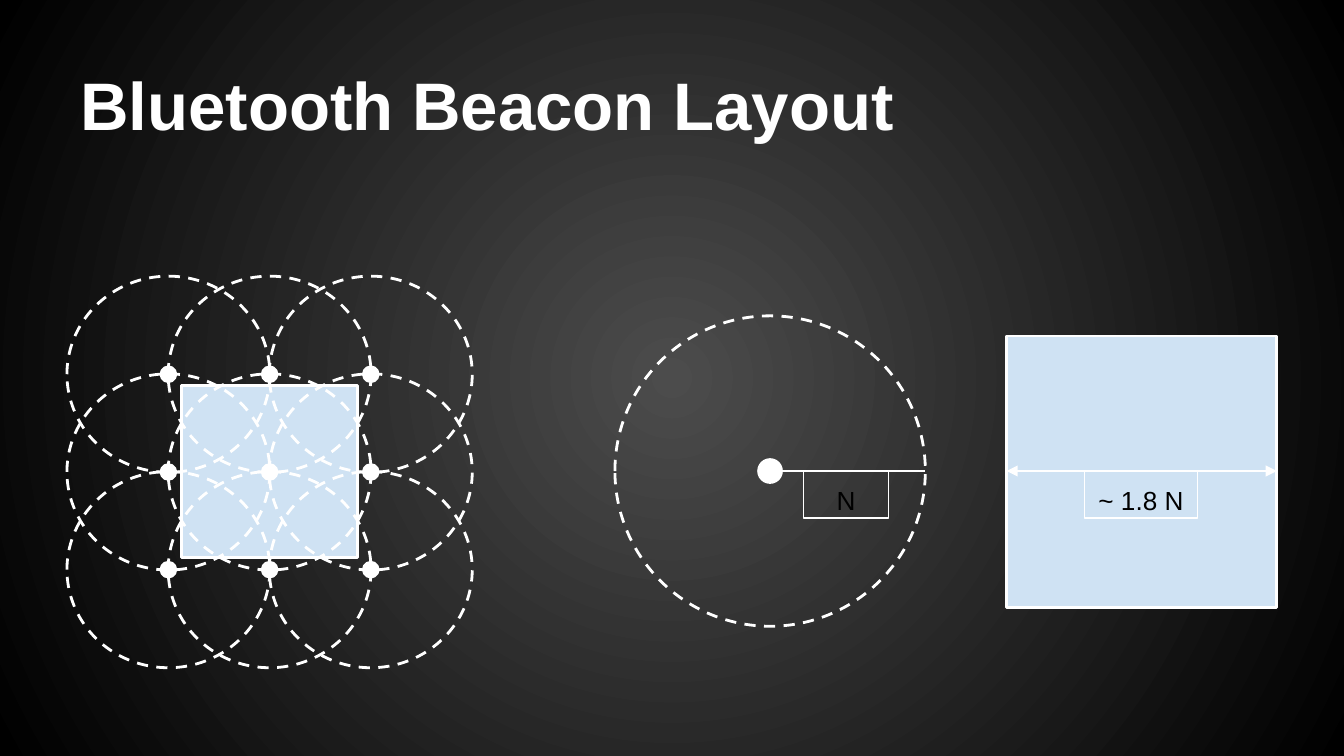
from itertools import product

from pptx import Presentation
from pptx.dml.color import RGBColor
from pptx.enum.dml import MSO_LINE as Dash
from pptx.enum.shapes import MSO_CONNECTOR as Connector, MSO_SHAPE as Shape
from pptx.enum.text import MSO_ANCHOR as Anchor, PP_ALIGN as Align
from pptx.oxml import parse_xml
from pptx.oxml.ns import nsdecls, qn
from pptx.util import Inches, Pt

COLUMNS, ROWS = 100, 56.25
WHITE, BLACK, PALE_BLUE = "FFFFFF", "000000", "CFE2F3"


def color(value):
    return RGBColor.from_string(value)


def write(frame, text, size=14, ink=BLACK, bold=False, align=Align.LEFT, anchor=Anchor.TOP):
    frame.word_wrap = True
    frame.vertical_anchor = anchor
    frame.margin_left = frame.margin_right = Inches(0.1)
    frame.margin_top = frame.margin_bottom = Inches(0.1)
    paragraph = frame.paragraphs[0]
    paragraph.alignment = align
    run = paragraph.add_run()
    run.text = text
    run.font.name = "Arial"
    run.font.size = Pt(size)
    run.font.bold = bold
    run.font.color.rgb = color(ink)


class Board:
    def __init__(self, deck):
        self.cell_width = deck.slide_width / COLUMNS
        self.cell_height = deck.slide_height / ROWS
        self.slide = deck.slides.add_slide(deck.slide_layouts[6])
        self.shapes = self.slide.shapes

    def place(self, *cells):
        sizes = (self.cell_width, self.cell_height) * 2
        return [round(cell * size) for cell, size in zip(cells, sizes)]

    def backdrop(self, center, edge):
        fill = self.slide.background.fill
        fill.gradient()
        for stop, shade in zip(fill.gradient_stops, (center, edge)):
            stop.color.rgb = color(shade)
        gradient = self.slide.element.cSld.find(".//" + qn("a:gradFill"))
        gradient.replace(gradient.find(qn("a:lin")), parse_xml(
            f'<a:path {nsdecls("a")} path="circle">'
            '<a:fillToRect l="50000" t="50000" r="50000" b="50000"/></a:path>'))

    def title(self, text, *cells):
        box = self.shapes.add_textbox(*self.place(*cells))
        write(box.text_frame, text, size=36, ink=WHITE, bold=True, anchor=Anchor.BOTTOM)

    def outline(self, kind, *cells, fill=None, dashed=False, weight=1.5):
        figure = self.shapes.add_shape(kind, *self.place(*cells))
        figure.shadow.inherit = False
        if fill:
            figure.fill.solid()
            figure.fill.fore_color.rgb = color(fill)
        else:
            figure.fill.background()
        figure.line.color.rgb = color(WHITE)
        figure.line.width = Pt(weight)
        if dashed:
            figure.line.dash_style = Dash.DASH
        return figure

    def reach(self, x, y, width, height):
        return self.outline(Shape.OVAL, x - width / 2, y - height / 2, width, height, dashed=True)

    def beacon(self, x, y, size):
        return self.outline(Shape.OVAL, x - size / 2, y - size / 2, size, size, fill=WHITE)

    def area(self, *cells):
        self.outline(Shape.RECTANGLE, *cells, fill=PALE_BLUE)

    def label(self, text, *cells):
        box = self.outline(Shape.RECTANGLE, *cells, weight=0.75)
        write(box.text_frame, text, align=Align.CENTER)

    def measure(self, start, end, y, arrows=False):
        rule = self.shapes.add_connector(Connector.STRAIGHT, *self.place(start, y, end, y))
        rule.line.color.rgb = color(WHITE)
        rule.line.width = Pt(1.5)
        if arrows:
            for tip in ("headEnd", "tailEnd"):
                rule.line._get_or_add_ln().append(
                    parse_xml(f'<a:{tip} {nsdecls("a")} type="triangle"/>'))
        rule._element.spPr.append(parse_xml(f'<a:effectLst {nsdecls("a")}/>'))


def main():
    deck = Presentation()
    deck.slide_width, deck.slide_height = Inches(10), Inches(5.625)
    board = Board(deck)
    board.backdrop("4C4C4C", BLACK)
    board.title("Bluetooth Beacon Layout", 5, 2.3, 90, 9.4)

    board.area(13.5, 28.7, 13.1, 12.8)
    sites = [(12.53 + 7.53 * column, 27.85 + 7.27 * row)
             for row, column in product(range(3), repeat=2)]
    for x, y in sites:
        board.reach(x, y, 15.1, 14.6)
    for x, y in sites:
        board.beacon(x, y, 1.1)

    middle = 35.05
    board.area(74.9, 25, 20.1, 20.2)
    radius_model = [board.reach(57.3, middle, 23.1, 23.1), board.beacon(57.3, middle, 1.7)]
    board.shapes.add_group_shape(radius_model)
    board.measure(58.2, 68.8, middle)
    board.measure(74.9, 95, middle, arrows=True)
    board.label("N", 59.8, middle, 6.3, 3.5)
    board.label("~ 1.8 N", 80.7, middle, 8.4, 3.5)

    deck.save("out.pptx")


if __name__ == "__main__":
    main()
